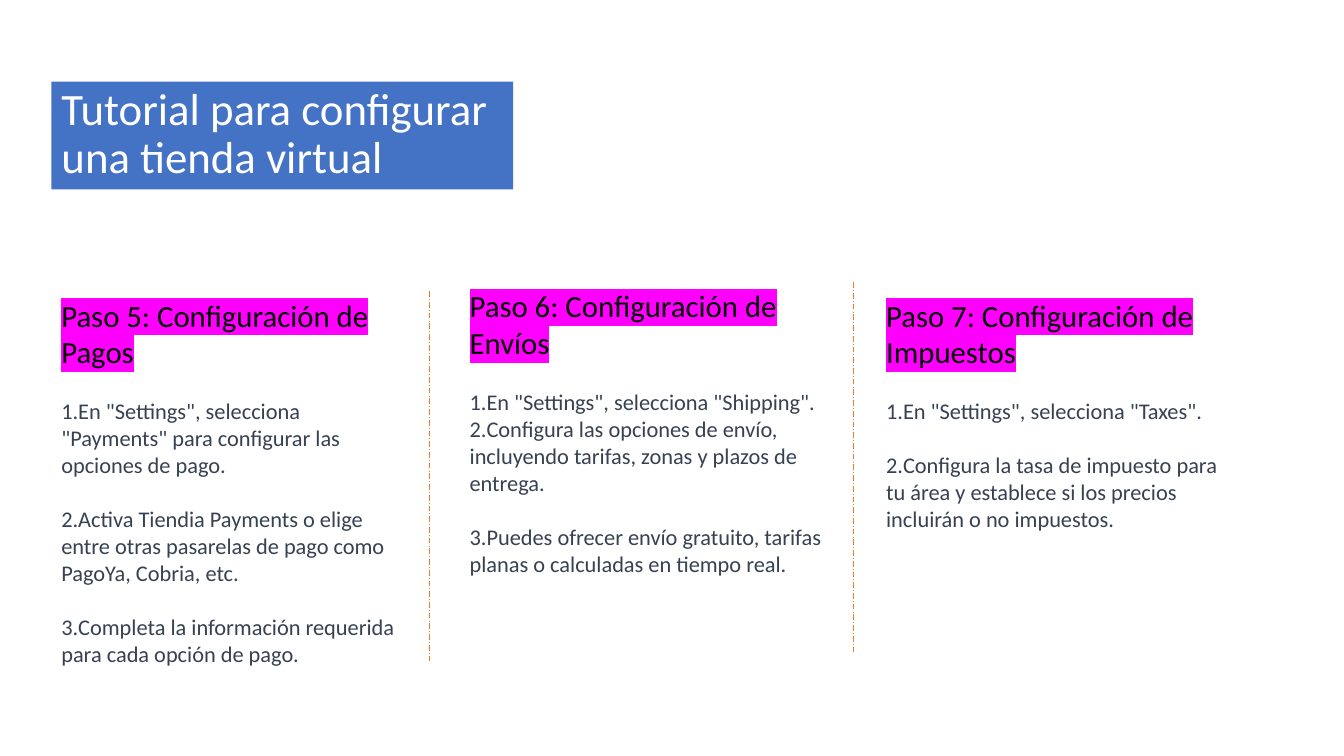
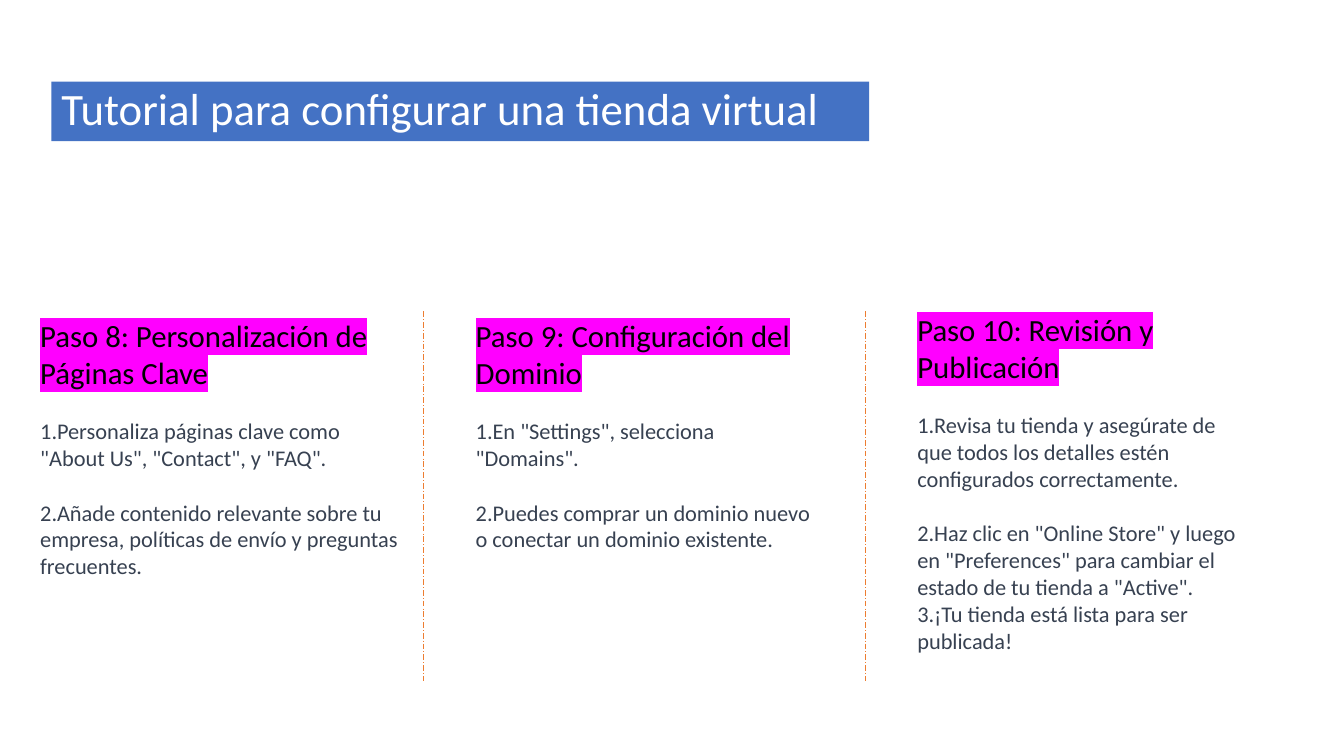
from lxml.etree import SubElement
from pptx import Presentation
from pptx.dml.color import RGBColor
from pptx.enum.dml import MSO_LINE
from pptx.enum.shapes import MSO_CONNECTOR
from pptx.enum.text import MSO_ANCHOR, MSO_AUTO_SIZE, PP_ALIGN
from pptx.oxml.ns import qn
from pptx.util import Inches, Pt

FONT = "Calibri"
BLUE = RGBColor(0x44, 0x72, 0xC4)
ORANGE = RGBColor(0xED, 0x7D, 0x31)
MAGENTA = RGBColor(0xFF, 0x00, 0xFF)
BLACK = RGBColor(0x00, 0x00, 0x00)
WHITE = RGBColor(0xFF, 0xFF, 0xFF)
SLATE = RGBColor(0x37, 0x41, 0x51)

TITLE = "Tutorial para configurar una tienda virtual"
TITLE_LEFT, TITLE_TOP = 0.51, 0.81
DIVIDER_HEIGHT = 3.67
GROUP_GAP = Pt(19.5)  # one line of 16 pt text

# Step: box (left, top, width, height), heading, groups of numbered items.
# Items in one group follow each other without a gap.
SLIDES = [
    {
        "title_size": (4.58, 1.07),
        "dividers": [(4.26, 2.89), (8.46, 2.8)],
        "steps": [
            ((0.51, 2.89, 3.51, 3.8), "Paso 5: Configuración de Pagos", [
                ['En "Settings", selecciona "Payments" para configurar las opciones de pago.'],
                ["Activa Tiendia Payments o elige entre otras pasarelas de pago como "
                 "PagoYa, Cobria, etc."],
                ["Completa la información requerida para cada opción de pago."],
            ]),
            ((4.56, 2.8, 3.9, 3), "Paso 6: Configuración de Envíos", [
                ['En "Settings", selecciona "Shipping".',
                 "Configura las opciones de envío, incluyendo tarifas, zonas y plazos de entrega."],
                ["Puedes ofrecer envío gratuito, tarifas planas o calculadas en tiempo real."],
            ]),
            ((8.69, 2.89, 3.71, 2.46), "Paso 7: Configuración de Impuestos", [
                ['En "Settings", selecciona "Taxes".'],
                ["Configura la tasa de impuesto para tu área y establece si los precios "
                 "incluirán o no impuestos."],
            ]),
        ],
    },
    {
        "title_size": (8.11, 0.59),
        "dividers": [(4.2, 3.09), (8.58, 3.09)],
        "steps": [
            ((0.3, 3.09, 3.85, 2.73), "Paso 8: Personalización de Páginas Clave", [
                ['Personaliza páginas clave como "About Us", "Contact", y "FAQ".'],
                ["Añade contenido relevante sobre tu empresa, políticas de envío y "
                 "preguntas frecuentes."],
            ]),
            ((4.62, 3.09, 3.6, 2.46), "Paso 9: Configuración del Dominio", [
                ['En "Settings", selecciona "Domains".'],
                ["Puedes comprar un dominio nuevo o conectar un dominio existente."],
            ]),
            ((9, 3.03, 3.53, 3.53), "Paso 10: Revisión y Publicación", [
                ["Revisa tu tienda y asegúrate de que todos los detalles estén "
                 "configurados correctamente."],
                ['Haz clic en "Online Store" y luego en "Preferences" para cambiar el '
                 'estado de tu tienda a "Active".',
                 "¡Tu tienda está lista para ser publicada!"],
            ]),
        ],
    },
]


def add_run(p, text, size, color):
    r = p.add_run()
    r.text = text
    r.font.size = Pt(size)
    r.font.bold = False
    r.font.color.rgb = color
    r.font.name = FONT
    return r


def highlight(r, color):
    rPr = r.font._element
    mark = SubElement(rPr, qn("a:highlight"))
    SubElement(mark, qn("a:srgbClr"), val=str(color))
    rPr.find(qn("a:solidFill")).addnext(mark)


def number(p):
    """Give the paragraph an automatic number with no hanging indent."""
    pPr = p._p.get_or_add_pPr()
    pPr.set("marL", "0")
    pPr.set("indent", "0")
    SubElement(pPr, qn("a:buAutoNum"), type="arabicPeriod")


def add_title(s, size):
    sp = s.shapes.title
    sp.left, sp.top = Inches(TITLE_LEFT), Inches(TITLE_TOP)
    sp.width, sp.height = (Inches(v) for v in size)
    sp.fill.solid()
    sp.fill.fore_color.rgb = BLUE
    tf = sp.text_frame
    tf.word_wrap = True
    tf.auto_size = MSO_AUTO_SIZE.NONE
    tf.vertical_anchor = MSO_ANCHOR.TOP
    p = tf.paragraphs[0]
    p.alignment = PP_ALIGN.LEFT
    p.line_spacing = 0.9
    p.space_after = Pt(6)
    add_run(p, TITLE, 32, WHITE)


def add_step(s, box, heading, groups):
    tf = s.shapes.add_textbox(*(Inches(v) for v in box)).text_frame
    tf.word_wrap = True
    highlight(add_run(tf.paragraphs[0], heading, 22, BLACK), MAGENTA)
    for group in groups:
        for i, item in enumerate(group):
            p = tf.add_paragraph()
            number(p)
            if i == 0:
                p.space_before = GROUP_GAP
            add_run(p, item, 16, SLATE)


def add_divider(s, x, top):
    line = s.shapes.add_connector(MSO_CONNECTOR.STRAIGHT, Inches(x), Inches(top),
                                  Inches(x), Inches(top + DIVIDER_HEIGHT))
    line.line.color.rgb = ORANGE
    line.line.width = Pt(0.5)
    line.line.dash_style = MSO_LINE.LONG_DASH_DOT
    SubElement(line._element.spPr, qn("a:effectLst"))


def main():
    prs = Presentation()
    prs.slide_width, prs.slide_height = Inches(13.33), Inches(7.5)
    title_only = prs.slide_layouts[5]
    for content in SLIDES:
        s = prs.slides.add_slide(title_only)
        add_title(s, content["title_size"])
        for step in content["steps"]:
            add_step(s, *step)
        for divider in content["dividers"]:
            add_divider(s, *divider)
    prs.save("out.pptx")


if __name__ == "__main__":
    main()
